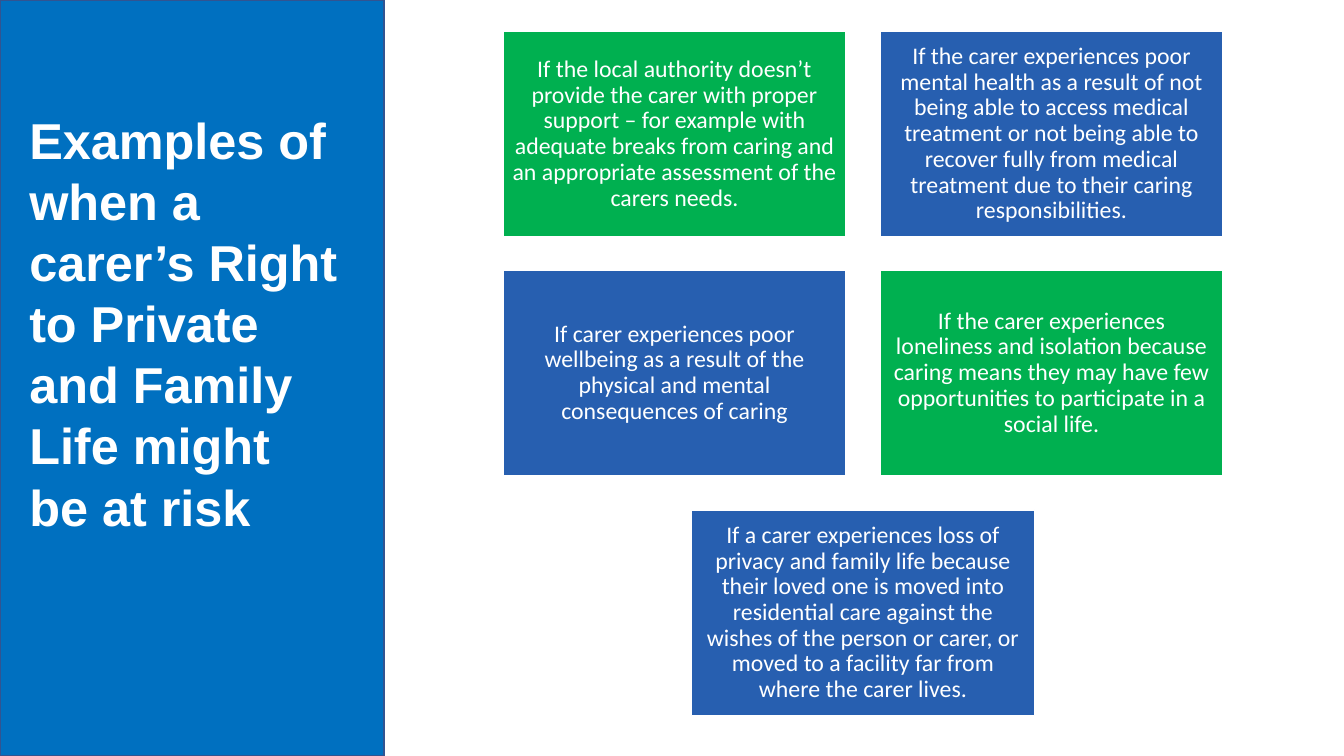
import dataclasses

import pptx
import pptx.dml.color
import pptx.enum.shapes
import pptx.enum.text
import pptx.util

PX = 9144  # 100 px to the inch
PAGE_WIDTH, PAGE_HEIGHT = 1333, 750
COLUMNS = 2

TITLE = "Examples of when a carer’s Right to Private and Family Life might be at risk"
EXAMPLES = [
    ("If the local authority doesn’t provide the carer with proper support – for example "
     "with adequate breaks from caring and an appropriate assessment of the carers needs.",
     "green"),
    ("If the carer experiences poor mental health as a result of not being able to access "
     "medical treatment or not being able to recover fully from medical treatment due to "
     "their caring responsibilities.", "blue"),
    ("If carer experiences poor wellbeing as a result of the physical and mental "
     "consequences of caring", "blue"),
    ("If the carer experiences loneliness and isolation because caring means they may "
     "have few opportunities to participate in a social life.", "green"),
    ("If a carer experiences loss of privacy and family life because their loved one is "
     "moved into residential care against the wishes of the person or carer, or moved to "
     "a facility far from where the carer lives.", "blue"),
]


@dataclasses.dataclass(frozen=True)
class Theme:
    panel: str = "0070C0"
    panel_edge: str = "325491"
    green: str = "00B050"
    blue: str = "275FB0"
    white: str = "FFFFFF"
    title_font: str = "Arial"
    body_font: str = "Calibri"
    title_size: int = 36
    title_leading: float = 43.6
    body_size: int = 17


THEME = Theme()


@dataclasses.dataclass(frozen=True)
class Box:
    left: int
    top: int
    width: int
    height: int

    def place(self, shape):
        shape.left, shape.top = self.left * PX, self.top * PX
        shape.width, shape.height = self.width * PX, self.height * PX


def rgb(value):
    return pptx.dml.color.RGBColor.from_string(value)


def add_rectangle(page, box, fill, edge):
    shape = page.shapes.add_shape(pptx.enum.shapes.MSO_SHAPE.RECTANGLE, 0, 0, 0, 0)
    box.place(shape)
    shape.shadow.inherit = False
    shape.fill.solid()
    shape.fill.fore_color.rgb = rgb(fill)
    shape.line.color.rgb = rgb(edge)
    shape.line.width = pptx.util.Pt(1)
    return shape


def write_text(shape, text, font, size, bold, align, anchor, spacing):
    frame = shape.text_frame
    frame.text = text
    frame.word_wrap = True
    frame.auto_size = pptx.enum.text.MSO_AUTO_SIZE.NONE
    frame.vertical_anchor = anchor
    para = frame.paragraphs[0]
    para.alignment = align
    para.line_spacing = spacing
    span = para.runs[0]
    span.font.name = font
    span.font.size = pptx.util.Pt(size)
    span.font.bold = bold
    span.font.color.rgb = rgb(THEME.white)


def add_title_panel(page, box):
    panel = add_rectangle(page, box, THEME.panel, THEME.panel_edge)
    title = page.shapes.title
    title.element.addprevious(panel.element)
    Box(box.left + 19, box.top + 103, box.width - 52, 434).place(title)
    write_text(title, TITLE, THEME.title_font, THEME.title_size, True,
               pptx.enum.text.PP_ALIGN.LEFT, pptx.enum.text.MSO_ANCHOR.TOP,
               pptx.util.Pt(THEME.title_leading))


def add_example_grid(page, box, card_width=340, card_height=204, gap=34):
    """Fill rows of cards, centring a row that is not full."""
    for index, (text, colour) in enumerate(EXAMPLES):
        row, column = divmod(index, COLUMNS)
        in_row = min(COLUMNS, len(EXAMPLES) - row * COLUMNS)
        row_width = in_row * (card_width + gap) - gap
        card_box = Box(box.left + (box.width - row_width) // 2 + column * (card_width + gap),
                       box.top + row * (box.height - card_height) // 2,
                       card_width, card_height)
        card = add_rectangle(page, card_box, getattr(THEME, colour), THEME.white)
        write_text(card, text, THEME.body_font, THEME.body_size, False,
                   pptx.enum.text.PP_ALIGN.CENTER, pptx.enum.text.MSO_ANCHOR.MIDDLE, 0.9)
        frame = card.text_frame
        frame.margin_left = frame.margin_right = 7 * PX
        frame.margin_top = frame.margin_bottom = 7 * PX


def main():
    deck = pptx.Presentation()
    deck.slide_width, deck.slide_height = PAGE_WIDTH * PX, PAGE_HEIGHT * PX
    page = deck.slides.add_slide(deck.slide_layouts.get_by_name("Title Only"))
    add_title_panel(page, Box(0, 0, 381, PAGE_HEIGHT))
    add_example_grid(page, Box(499, 31, 714, 679))
    deck.save("out.pptx")


if __name__ == "__main__":
    main()
